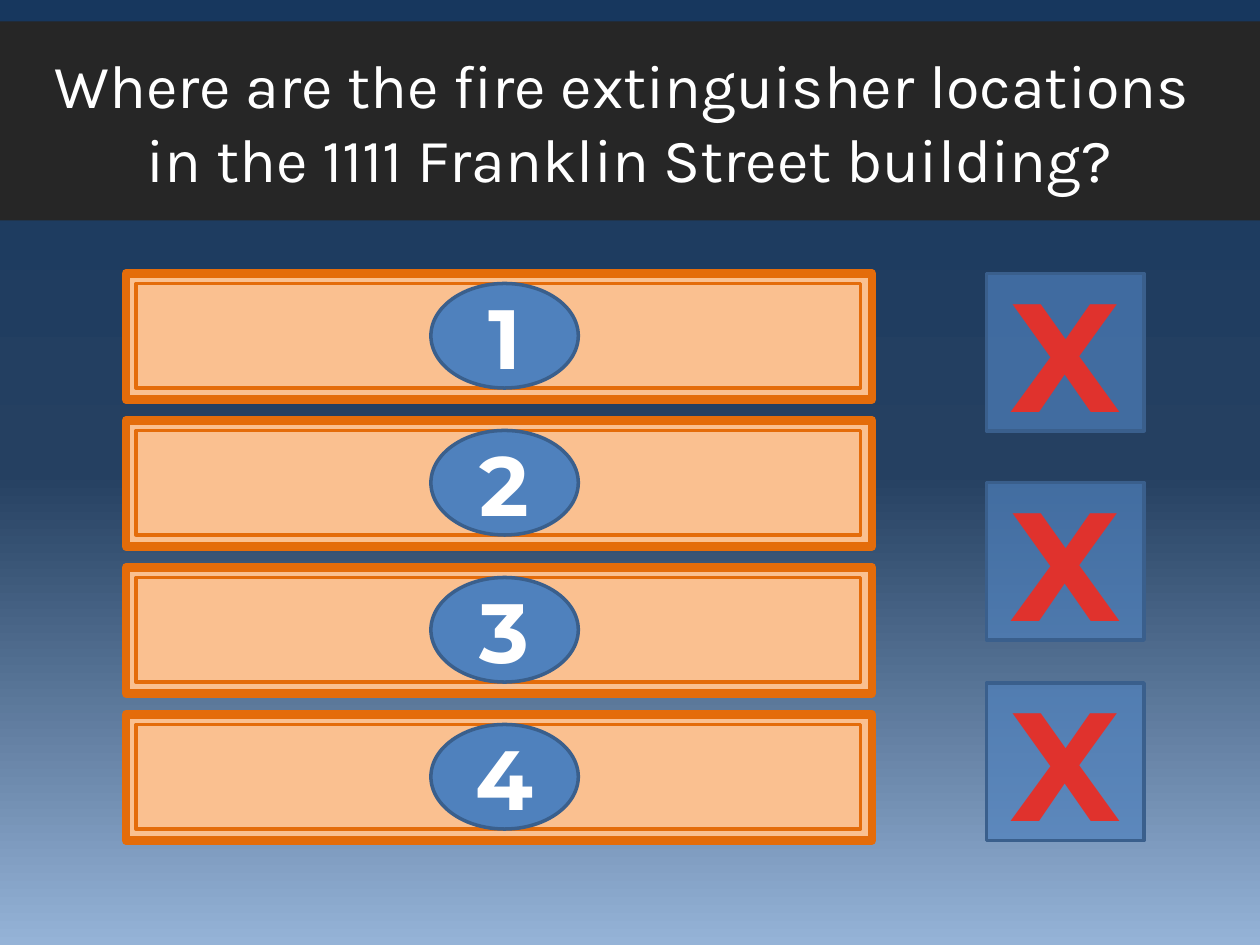
from lxml.etree import SubElement
from pptx import Presentation
from pptx.dml.color import RGBColor
from pptx.enum.shapes import MSO_SHAPE as Shape
from pptx.enum.text import MSO_ANCHOR as Anchor, PP_ALIGN as Align
from pptx.oxml.ns import qn
from pptx.util import Inches, Pt

COLORS = {
    "sky_top": "17375E",
    "sky_middle": "254061",
    "sky_bottom": "95B3D7",
    "banner": "262626",
    "white": "FFFFFF",
    "peach": "FAC090",
    "orange": "E46C0A",
    "blue": "4F81BD",
    "dark_blue": "3A5F8C",
    "red": "E0322D",
}
QUESTION = (
    "Where are the fire extinguisher locations \n"
    "in the 1111 Franklin Street building?"
)
ROW_TOP, ROW_PITCH, ROW_COUNT = 2.17, 3.5 / 3, 4
STRIKE_TOPS = (2.17, 3.83, 5.42)


class QuizSlide:
    def __init__(self, slide):
        self.slide = slide

    def color(self, name):
        return RGBColor.from_string(COLORS[name])

    def shape(self, kind, box, fill, line=None, width=2, shapes=None):
        shapes = self.slide.shapes if shapes is None else shapes
        shape = shapes.add_shape(kind, *map(Inches, box))
        shape.shadow.inherit = False
        shape.fill.solid()
        shape.fill.fore_color.rgb = self.color(fill)
        if line:
            shape.line.color.rgb = self.color(line)
            shape.line.width = Pt(width)
        else:
            shape.line.fill.background()
        return shape

    def text(self, shape, text, font, size, color="white", bold=False):
        text_frame = shape.text_frame
        text_frame.word_wrap = True
        text_frame.text = text
        for paragraph in text_frame.paragraphs:
            paragraph.alignment = Align.CENTER
            for run in paragraph.runs:
                run.font.name = font
                run.font.size = Pt(size)
                run.font.bold = bold
                run.font.color.rgb = self.color(color)
        return text_frame

    def background(self):
        shape = self.shape(Shape.RECTANGLE, (0, 0, 10, 7.5), "sky_top")
        shape.fill.gradient()
        shape.fill.gradient_angle = 270
        stops = next(shape.element.iter(qn("a:gsLst")))
        stops.clear()
        for position, name in ((0, "sky_top"), (50, "sky_middle"), (100, "sky_bottom")):
            stop = SubElement(stops, qn("a:gs"), pos=str(position * 1000))
            SubElement(stop, qn("a:srgbClr"), val=COLORS[name])

    def banner(self):
        shape = self.shape(Shape.RECTANGLE, (0, 0.17, 10, 1.58), "banner")
        text_frame = self.text(shape, QUESTION, "Karla", 35)
        text_frame.vertical_anchor = Anchor.MIDDLE

    def answer_row(self, number, top):
        shapes = self.slide.shapes.add_group_shape().shapes
        inner_top = top + 0.08
        self.shape(Shape.RECTANGLE, (1, top, 5.92, 1), "peach", "orange", 5, shapes)
        self.shape(
            Shape.RECTANGLE, (1.08, inner_top, 5.75, 0.83), "peach", "orange", 2, shapes
        )
        badge = self.shape(
            Shape.OVAL, (3.42, inner_top, 1.17, 0.83), "blue", "dark_blue", 2, shapes
        )
        text_frame = self.text(badge, str(number), "Montserrat", 48, bold=True)
        text_frame.vertical_anchor = Anchor.MIDDLE

    def strike(self, top):
        tile = self.shape(
            Shape.RECTANGLE, (7.83, top, 1.25, 1.25), "blue", "dark_blue"
        )
        fill_color = tile.element.spPr.find(qn("a:solidFill"))[0]
        SubElement(fill_color, qn("a:alpha"), val="69000")
        box = self.slide.shapes.add_textbox(
            *map(Inches, (7.92, top - 0.17, 1.06, 1.58))
        )
        text_frame = self.text(box, "X", "Montserrat", 88, "red", True)
        next(text_frame.paragraphs[0].runs[0].font for _ in "X")
        next(box.element.iter(qn("a:rPr"))).set("spc", "50")


def main():
    presentation = Presentation()
    presentation.slide_width = Inches(10)
    presentation.slide_height = Inches(7.5)
    quiz = QuizSlide(presentation.slides.add_slide(presentation.slide_layouts[6]))
    quiz.background()
    quiz.banner()
    for number in range(ROW_COUNT, 0, -1):
        quiz.answer_row(number, ROW_TOP + (number - 1) * ROW_PITCH)
    for top in STRIKE_TOPS:
        quiz.strike(top)
    presentation.save("out.pptx")


if __name__ == "__main__":
    main()
